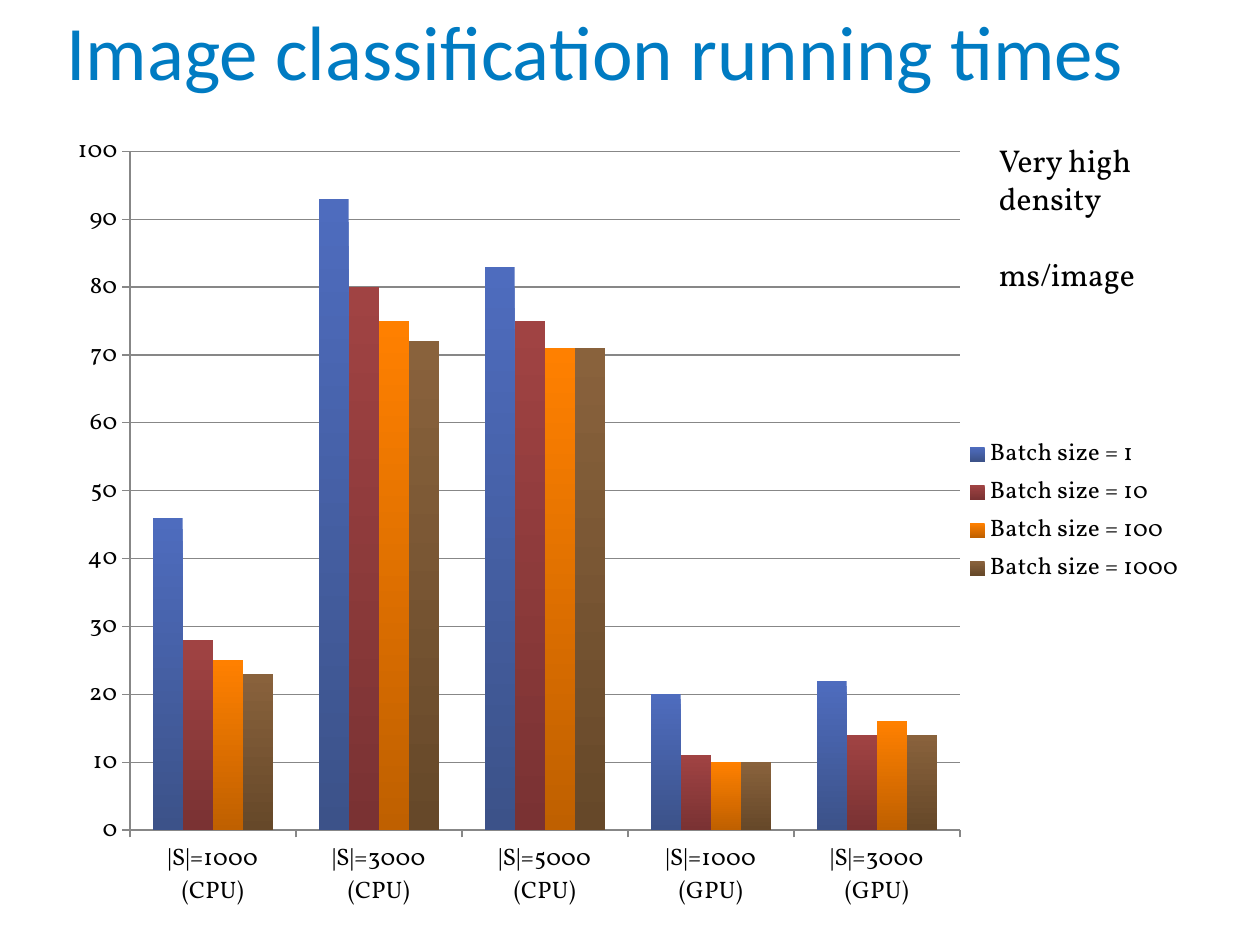
from typing import NamedTuple

from lxml import etree
from pptx import Presentation
from pptx.chart.data import CategoryChartData
from pptx.dml.color import RGBColor
from pptx.enum.chart import XL_CHART_TYPE, XL_LEGEND_POSITION, XL_TICK_MARK
from pptx.enum.text import MSO_ANCHOR, MSO_AUTO_SIZE
from pptx.oxml.ns import qn
from pptx.util import Inches, Pt

COLUMN = XL_CHART_TYPE.COLUMN_CLUSTERED
RIGHT = XL_LEGEND_POSITION.RIGHT
OUT = XL_TICK_MARK.OUTSIDE
TOP, BOTTOM = MSO_ANCHOR.TOP, MSO_ANCHOR.BOTTOM
FIT, FIXED = MSO_AUTO_SIZE.SHAPE_TO_FIT_TEXT, MSO_AUTO_SIZE.NONE

COLORS = {"title": "007BC2", "text": "000000", "grid": "878787"}
PLOT = {"x": 0.059, "y": 0.021, "w": 0.732, "h": 0.903}


class Label(NamedTuple):
    box: tuple
    lines: list
    size: int
    face: str
    color: str
    format: dict
    frame: dict


class Batch(NamedTuple):
    size: int
    times: tuple
    light: str
    dark: str


LABELS = [
    Label((0.43, 0.01, 9.13, 0.8), ["Image classification running times"],
          44, "Calibri", "title", {"line_spacing": Pt(58)},
          {"vertical_anchor": BOTTOM, "auto_size": FIXED}),
    Label((7.83, 1.07, 1.73, 1.31), ["Very high density", "ms/image"],
          18, "Vollkorn", "text", {"space_before": Pt(21.7)},
          {"vertical_anchor": TOP, "auto_size": FIT}),
]
GROUPS = ["|S|=1000 (CPU)", "|S|=3000 (CPU)", "|S|=5000 (CPU)",
          "|S|=1000 (GPU)", "|S|=3000 (GPU)"]
BATCHES = [
    Batch(1, (46, 93, 83, 20, 22), "4E6CBE", "3C5289"),
    Batch(10, (28, 80, 75, 11, 14), "A04343", "7A3233"),
    Batch(100, (25, 75, 71, 10, 16), "FF8000", "BF6000"),
    Batch(1000, (23, 72, 71, 10, 14), "89623C", "664829"),
]


def apply(target, values: dict) -> None:
    for name, value in values.items():
        setattr(target, name, value)


def style(font, size: int, face: str, color: str) -> None:
    apply(font, {"size": Pt(size), "name": face, "bold": False})
    font.color.rgb = RGBColor.from_string(COLORS[color])


def add_label(slide, label: Label) -> None:
    frame = slide.shapes.add_textbox(*map(Inches, label.box)).text_frame
    apply(frame, {"word_wrap": True, **label.frame})
    for i, line in enumerate(label.lines):
        para = frame.paragraphs[0] if i == 0 else frame.add_paragraph()
        run = para.add_run()
        run.text = line
        style(run.font, label.size, label.face, label.color)
        if i or "space_before" not in label.format:
            apply(para, label.format)


def place_plot(chart) -> None:
    """Pin the inner plot area to fixed fractions of the chart."""
    area = chart._chartSpace.find(".//" + qn("c:plotArea"))
    old = area.find(qn("c:layout"))
    if old is not None:
        area.remove(old)
    layout = etree.Element(qn("c:layout"))
    area.insert(0, layout)
    manual = etree.SubElement(layout, qn("c:manualLayout"))
    parts = {"layoutTarget": "inner", "xMode": "edge", "yMode": "edge", **PLOT}
    for tag, value in parts.items():
        etree.SubElement(manual, qn("c:" + tag)).set("val", str(value))


def shade(series, batch: Batch) -> None:
    """Fill the bars from light at the top to dark at the foot."""
    fill = series.format.fill
    fill.gradient()
    fill.gradient_angle = 270
    for stop, color in zip(fill.gradient_stops, (batch.light, batch.dark)):
        stop.color.rgb = RGBColor.from_string(color)


def add_bars(slide) -> None:
    data = CategoryChartData()
    data.categories = GROUPS
    for batch in BATCHES:
        data.add_series(f"Batch size = {batch.size}", batch.times)
    box = map(Inches, (0.5, 1.07, 9, 6.14))
    chart = slide.shapes.add_chart(COLUMN, *box, data).chart
    apply(chart, {"has_title": False, "has_legend": True})
    style(chart.font, 10, "Vollkorn", "text")
    apply(chart.legend, {"position": RIGHT, "include_in_layout": False})
    style(chart.legend.font, 14, "Vollkorn", "text")
    place_plot(chart)

    groups, times = chart.category_axis, chart.value_axis
    apply(times, {"minimum_scale": 0, "maximum_scale": 100, "major_unit": 10,
                  "has_major_gridlines": True})
    for axis in (groups, times):
        axis.major_tick_mark = OUT
        style(axis.tick_labels.font, 14, "Vollkorn", "text")
    for part in (groups, times, times.major_gridlines):
        part.format.line.width = Pt(0.75)
        part.format.line.color.rgb = RGBColor.from_string(COLORS["grid"])

    plot = chart.plots[0]
    apply(plot, {"gap_width": 150, "overlap": 0, "vary_by_categories": False})
    for series, batch in zip(plot.series, BATCHES):
        shade(series, batch)


def main() -> None:
    deck = Presentation()
    apply(deck, {"slide_width": Inches(10), "slide_height": Inches(7.5)})
    slide = deck.slides.add_slide(deck.slide_layouts[6])
    add_bars(slide)
    for label in LABELS:
        add_label(slide, label)
    deck.save("out.pptx")


if __name__ == "__main__":
    main()
